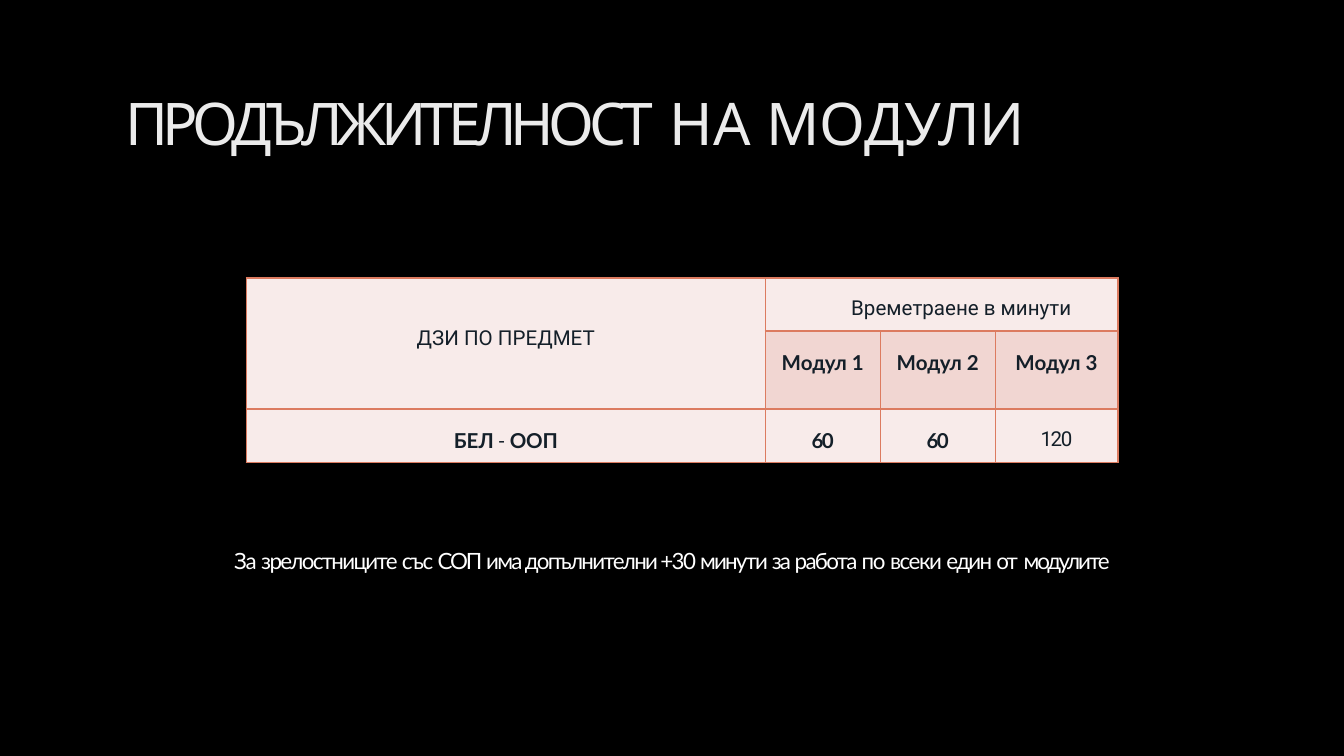
"""Build a slide with a table of exam module durations."""
from dataclasses import dataclass

import lxml.etree
import pptx
import pptx.dml.color
import pptx.enum.text
import pptx.oxml.ns
import pptx.util

Pt = pptx.util.Pt
RGBColor = pptx.dml.color.RGBColor
PP_ALIGN = pptx.enum.text.PP_ALIGN
qn = pptx.oxml.ns.qn

BLACK = RGBColor(0x00, 0x00, 0x00)
WHITE = RGBColor(0xFF, 0xFF, 0xFF)
LIGHT = RGBColor(0xEB, 0xEB, 0xEB)
INK = RGBColor(0x14, 0x1F, 0x29)
PALE = RGBColor(0xF8, 0xEB, 0xEA)
ROSE = RGBColor(0xF1, 0xD6, 0xD2)
CORAL = RGBColor(0xDC, 0x7B, 0x60)


@dataclass(frozen=True)
class Span:
    text: str
    spacing: float = 0
    bold: bool = False
    font: str = "Lato"


@dataclass(frozen=True)
class Cell:
    row: int
    col: int
    spans: tuple[Span, ...]
    fill: RGBColor = PALE
    top: float = 10
    indent: float = 0
    align: PP_ALIGN = PP_ALIGN.CENTER


TITLE = (
    Span("ПРОДЪЛЖИТЕЛНОСТ", -3, font="Quicksand"),
    Span(" ", font="Quicksand"),
    Span("НА МОДУЛИ", font="Quicksand"),
)
NOTE = (
    Span("За ", -0.7), Span("зрелостниците ", -0.9), Span("със ", -0.8),
    Span("СОП ", -1.1), Span("има допълнителни +30 ", -0.9),
    Span("минути ", -1), Span("за ", -1.1), Span("работа ", -0.9),
    Span("по ", -0.7), Span("всеки ", -0.8), Span("един ", -0.9),
    Span("от", -1.1), Span(" "), Span("модулите", -1.1),
)
COLUMNS = (278, 61.6, 61.6, 65.6)
ROWS = (28.5, 41.8, 28.5)
CELLS = (
    Cell(0, 0, (Span("ДЗИ ПО ПРЕДМЕТ", font="Roboto"),), top=25.7),
    Cell(0, 1, (Span("Времетраене в минути", font="Roboto"),),
         indent=46, align=PP_ALIGN.LEFT),
    *(Cell(1, n, (Span(f"Модул {n}", bold=True),), ROSE) for n in (1, 2, 3)),
    Cell(2, 0, (Span("БЕЛ ", bold=True), Span("- ", font="Roboto"),
                Span("ООП", -0.1, True))),
    *(Cell(2, n, (Span("60", -0.9, True),)) for n in (1, 2)),
    Cell(2, 3, (Span("120", -0.8, font="Roboto"),)),
)


def add_text(p, text: str, *, size: float, color: RGBColor, font: str,
             bold: bool = False, spacing: float = 0) -> None:
    r = p.add_run()
    r.text = text
    r.font.size = Pt(size)
    r.font.name = font
    r.font.bold = bold
    r.font.color.rgb = color
    if spacing:
        r._r.get_or_add_rPr().set("spc", str(round(spacing * 100)))


def add_spans(p, spans: tuple[Span, ...], size: float, color: RGBColor) -> None:
    for span in spans:
        add_text(p, span.text, size=size, color=color, font=span.font,
                 bold=span.bold, spacing=span.spacing)


def add_line(s, box: tuple[float, ...], spans: tuple[Span, ...], size: float,
             color: RGBColor, align: PP_ALIGN) -> None:
    tf = s.shapes.add_textbox(*map(Pt, box)).text_frame
    tf.word_wrap = True
    tf.margin_left = tf.margin_right = tf.margin_bottom = 0
    tf.margin_top = Pt(1)
    p = tf.paragraphs[0]
    p.alignment = align
    add_spans(p, spans, size, color)


def style_cell(cell, fill: RGBColor) -> None:
    cell.margin_left = cell.margin_right = 0
    cell.margin_top = cell.margin_bottom = 0
    cell.fill.solid()
    cell.fill.fore_color.rgb = fill
    tcPr = cell._tc.get_or_add_tcPr()
    for i, side in enumerate(("lnL", "lnR", "lnT", "lnB")):
        ln = lxml.etree.Element(qn(f"a:{side}"), w=str(Pt(1)))
        solid = lxml.etree.SubElement(ln, qn("a:solidFill"))
        lxml.etree.SubElement(solid, qn("a:srgbClr"), val=str(CORAL))
        tcPr.insert(i, ln)


def add_durations(s) -> None:
    table = s.shapes.add_table(
        len(ROWS), len(COLUMNS), Pt(132), Pt(149),
        Pt(sum(COLUMNS)), Pt(sum(ROWS))).table
    for column, width in zip(table.columns, COLUMNS):
        column.width = Pt(width)
    for row, height in zip(table.rows, ROWS):
        row.height = Pt(height)
    for cell in table.iter_cells():
        style_cell(cell, PALE)
    table.cell(0, 0).merge(table.cell(1, 0))
    table.cell(0, 1).merge(table.cell(0, 3))
    for item in CELLS:
        cell = table.cell(item.row, item.col)
        cell.fill.fore_color.rgb = item.fill
        cell.margin_top = Pt(item.top)
        cell.margin_left = Pt(item.indent)
        p = cell.text_frame.paragraphs[0]
        p.alignment = item.align
        add_spans(p, item.spans, 11, INK)


def main() -> None:
    prs = pptx.Presentation()
    prs.slide_width, prs.slide_height = Pt(720), Pt(405)
    s = prs.slides.add_slide(prs.slide_layouts[6])
    s.background.fill.solid()
    s.background.fill.fore_color.rgb = BLACK
    add_line(s, (67, 45.4, 543, 39), TITLE, 31.5, LIGHT, PP_ALIGN.LEFT)
    add_line(s, (102, 292.3, 516, 16), NOTE, 12, WHITE, PP_ALIGN.CENTER)
    add_durations(s)
    prs.save("out.pptx")


if __name__ == "__main__":
    main()
